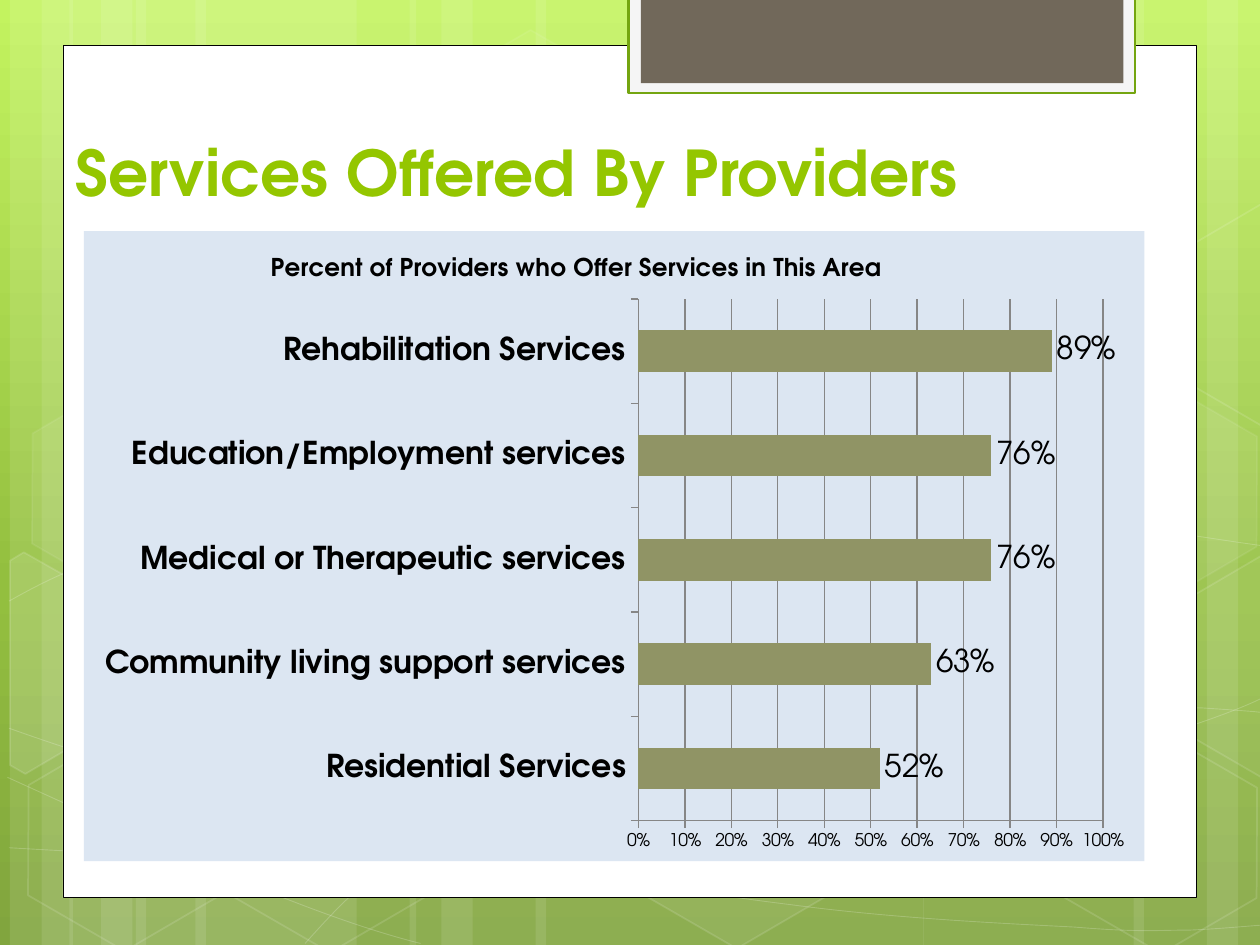
from copy import deepcopy
from math import cos, radians, sin

from lxml import etree
from pptx import Presentation
from pptx import util as u
from pptx.chart.data import CategoryChartData
from pptx.dml.color import RGBColor
from pptx.enum import chart as ch, shapes, text
from pptx.oxml import parse_xml
from pptx.oxml.ns import nsdecls, qn

WHITE = RGBColor(0xFF, 0xFF, 0xFF)
BLACK = RGBColor(0, 0, 0)
LIME = RGBColor(0x94, 0xC6, 0x00)
TAB_EDGE = RGBColor(0x74, 0xA5, 0x10)
TAB_FRAME = RGBColor(0xF5, 0xF5, 0xF5)
TAUPE = RGBColor(0x71, 0x68, 0x5A)
PALE_BLUE = RGBColor(0xDC, 0xE6, 0xF2)
OLIVE = RGBColor(0x90, 0x94, 0x65)
GRAY = RGBColor(0x86, 0x86, 0x86)
BACKDROP = [(0, RGBColor(0xC3, 0xF3, 0x5F)), (0.62, RGBColor(0x93, 0xBF, 0x3F)),
            (1, RGBColor(0x81, 0xA5, 0x3E))]
FONT = "TeX Gyre Adventor"
WIDTH, HEIGHT = 25.4, 19.05
TILT = 30

# Each wave is a start point followed by groups of three cubic control points
WAVES = [
    [(0.18, 17.09), (1.55, 17.17), (2.92, 17.25), (4.83, 17.22), (6.73, 17.2), (9.09, 17.15),
     (11.63, 16.89), (14.17, 16.64), (17.78, 16.15), (20.12, 15.67), (22.43, 15.19),
     (24.82, 14.43), (25.58, 14)],
    [(0.18, 12.12), (0.91, 11.71), (1.65, 11.33), (3.07, 10.95), (4.52, 10.57), (6.58, 10.01),
     (8.81, 9.83), (11.07, 9.65), (13.82, 9.63), (16.61, 9.83), (19.41, 10.03),
     (24.05, 10.82), (25.58, 11.02)],
    [(0.15, 15.67), (3.23, 17.07), (6.27, 18.47), (8.48, 19.02)],
    [(0.18, 14.68), (0.97, 14.96), (1.78, 15.24), (3.25, 15.65), (4.72, 16.03), (6.93, 16.66),
     (9.07, 17.09), (11.18, 17.53), (13.84, 17.98), (15.95, 18.24), (18.06, 18.52),
     (20.32, 18.62), (21.67, 18.69), (22.99, 18.8), (23.34, 18.75), (24, 18.75),
     (24.66, 18.72), (25.12, 18.67), (25.58, 18.64)],
    [(6.15, 19.02), (6.6, 18.52), (7.06, 18.01), (7.67, 17.55), (8.28, 17.09), (9.14, 16.59),
     (9.86, 16.23), (10.57, 15.88), (11, 15.72), (11.94, 15.47), (12.85, 15.21),
     (14.55, 14.86), (15.44, 14.68), (16.36, 14.5), (16.48, 14.5), (17.27, 14.45),
     (18.06, 14.38), (19.3, 14.3), (20.17, 14.27), (21.06, 14.25), (22.5, 14.27),
     (22.5, 14.27), (23.07, 14.27), (23.64, 14.27), (24.21, 14.27), (24.66, 14.3),
     (25.1, 14.33), (25.32, 14.35), (25.55, 14.38), (25.48, 14.35), (25.55, 14.38)],
]
# Left, top, fill opacity, line opacity
HEXAGONS = [(8.48, 0.91, 4, 8), (12.62, 14.96, 6, 12), (0.28, 15.01, None, 12),
            (0.36, 7.92, 7, 8), (4.42, 15.04, None, 12), (19.13, 11.51, 10, 12),
            (21.18, 15.06, None, 12), (21.18, 7.98, 7, 8)]
# Hexagons cut by the slide edge
LEFT_CUT = [(0.2, 11.3), (0.48, 11.13), (2.44, 12.24), (2.41, 14.48), (0.51, 15.6), (0.2, 15.42)]
RIGHT_CUT = [(23.52, 12.32), (25.43, 11.2), (25.63, 11.33), (25.63, 15.57), (25.45, 15.67),
             (23.52, 14.55)]

SERVICES = {
    "Residential Services": 0.52,
    "Community living support services": 0.63,
    "Medical or Therapeutic services": 0.76,
    "Education/Employment services": 0.76,
    "Rehabilitation Services": 0.89,
}


def turned(points, center, degrees):
    """Turn the points clockwise about the center."""
    c, s = cos(radians(degrees)), sin(radians(degrees))
    cx, cy = center
    return [(cx + (x - cx) * c - (y - cy) * s, cy + (x - cx) * s + (y - cy) * c)
            for x, y in points]


def manual_layout(element, inner=False, **fractions):
    """Place a chart part by fractions of the chart size."""
    target = '<c:layoutTarget val="inner"/>' if inner else ""
    modes = "".join(f'<c:{k}Mode val="edge"/>' for k in fractions if k in "xy")
    places = "".join(f'<c:{k} val="{v}"/>' for k, v in fractions.items())
    layout = parse_xml(f'<c:layout {nsdecls("c")}><c:manualLayout>{target}{modes}{places}'
                       '</c:manualLayout></c:layout>')
    for old in element.findall(qn("c:layout")):
        element.remove(old)
    tx = element.find(qn("c:tx"))
    element.insert(0 if tx is None else element.index(tx) + 1, layout)


class Deck:
    def __init__(self):
        self.prs = Presentation()
        self.prs.slide_width, self.prs.slide_height = u.Cm(WIDTH), u.Cm(HEIGHT)
        self.slide = self.prs.slides.add_slide(self.prs.slide_layouts[5])

    def backdrop(self, stops):
        fill = self.slide.background.fill
        fill.gradient()
        fill.gradient_angle = 270
        stop_list = self.slide.element.xpath(".//p:bg//a:gsLst")[0]
        stop_list.append(deepcopy(stop_list[-1]))
        for stop, (position, color) in zip(fill.gradient_stops, stops):
            stop.position, stop.color.rgb = position, color

    def paint(self, fill, color, opacity=100):
        fill.solid()
        fill.fore_color.rgb = color
        if opacity < 100:
            for rgb in fill._xPr.iterfind(qn("a:solidFill") + "/" + qn("a:srgbClr")):
                etree.SubElement(rgb, qn("a:alpha")).set("val", str(opacity * 1000))

    def style(self, shape, fill=None, opacity=100, line=None, weight=1, line_opacity=100):
        shape.shadow.inherit = False
        if fill is None or opacity is None:
            shape.fill.background()
        else:
            self.paint(shape.fill, fill, opacity)
        if line is None:
            shape.line.fill.background()
        else:
            shape.line.width = u.Pt(weight)
            self.paint(shape.line.fill, line, line_opacity)
        return shape

    def preset(self, kind, left, top, width, height, **look):
        shape = self.slide.shapes.add_shape(kind, u.Cm(left), u.Cm(top), u.Cm(width), u.Cm(height))
        return self.style(shape, **look)

    def rect(self, *box, **look):
        return self.preset(shapes.MSO_SHAPE.RECTANGLE, *box, **look)

    def hexagon(self, left, top, **look):
        hexagon = self.preset(shapes.MSO_SHAPE.HEXAGON, left, top, 4.45, 3.86, **look)
        hexagon.rotation = TILT
        hexagon.adjustments[0], hexagon.adjustments[1] = 0.285, 1.155

    def outline(self, points, close=False, **look):
        start, *rest = [(u.Cm(x), u.Cm(y)) for x, y in points]
        builder = self.slide.shapes.build_freeform(*start)
        builder.add_line_segments(rest, close=close)
        return self.style(builder.convert_to_shape(), **look)

    def wave(self, controls, **look):
        # Join every three line ends into one cubic curve
        wave = self.outline(controls, **look)
        ends = wave.element.xpath(".//a:lnTo")
        for i in range(0, len(ends), 3):
            curve = etree.Element(qn("a:cubicBezTo"))
            ends[i].addprevious(curve)
            for end in ends[i:i + 3]:
                curve.append(end[0])
                end.getparent().remove(end)

    def font(self, font, size, color=BLACK, bold=False):
        font.name, font.size, font.bold = FONT, u.Pt(size), bold
        font.color.rgb = color

    def title(self, words, left, top, width, height):
        title = self.slide.shapes.title
        title.left, title.top, title.width, title.height = map(u.Cm, (left, top, width, height))
        title.text_frame.vertical_anchor = text.MSO_ANCHOR.BOTTOM
        title.text_frame.word_wrap = True
        paragraph = title.text_frame.paragraphs[0]
        paragraph.alignment = text.PP_ALIGN.LEFT
        run = paragraph.add_run()
        run.text = words
        self.font(run.font, 36, LIME, True)
        # Bring the title in front of the decoration
        title.element.getparent().append(title.element)

    def bar_chart(self, heading, shares, *box):
        data = CategoryChartData(number_format="0%")
        data.categories = list(shares)
        data.add_series("Series 1", list(shares.values()))
        chart = self.slide.shapes.add_chart(ch.XL_CHART_TYPE.BAR_CLUSTERED,
                                            *map(u.Cm, box), data).chart
        self.font(chart.font, 10)
        chart.has_legend = False
        space = chart.element
        space.find(qn("c:chart")).addnext(parse_xml(
            f'<c:spPr {nsdecls("c", "a")}><a:solidFill><a:srgbClr val="{PALE_BLUE}"/>'
            '</a:solidFill><a:ln><a:noFill/></a:ln></c:spPr>'))

        # Heading and plot area
        run = chart.chart_title.text_frame.paragraphs[0].add_run()
        run.text = heading
        self.font(run.font, 14, bold=True)
        manual_layout(space.xpath("c:chart/c:title")[0], x=0.172, y=0.031)
        manual_layout(space.xpath("c:chart/c:plotArea")[0], inner=True,
                      x=0.523, y=0.108, w=0.438, h=0.828)

        # Axes
        for axis, size, bold in ((chart.category_axis, 18, True), (chart.value_axis, 10, False)):
            self.font(axis.tick_labels.font, size, bold=bold)
            axis.major_tick_mark = ch.XL_TICK_MARK.OUTSIDE
            axis.format.line.color.rgb = GRAY
        values = chart.value_axis
        values.minimum_scale, values.maximum_scale, values.major_unit = 0, 1, 0.1
        values.tick_labels.number_format = "0%"
        values.tick_labels.number_format_is_linked = False
        values.major_gridlines.format.line.color.rgb = GRAY

        # Bars and their labels
        plot = chart.plots[0]
        plot.gap_width, plot.vary_by_categories = 150, False
        self.paint(plot.series[0].format.fill, OLIVE)
        labels = plot.series[0].data_labels
        labels.show_value = True
        labels.number_format, labels.number_format_is_linked = "0%", False
        labels.position = ch.XL_LABEL_POSITION.OUTSIDE_END
        self.font(labels.font, 18)


def main():
    deck = Deck()
    deck.backdrop(BACKDROP)

    # Light stripes: bundles of three, one of them mirrored from the right edge
    for edge, wide, mirrored in ((0.2, 4.45, False), (1.4, 4.45, False),
                                 (25.6, 4.45, True), (8.26, 7.82, False)):
        for offset, width in ((2.54, wide), (0, 1.27), (0.64, 2.11)):
            left = edge - offset - width if mirrored else edge + offset
            stripe = deck.rect(left, 0, width, HEIGHT, fill=WHITE, opacity=10)
            stripe.rotation = 180 if mirrored else 0

    # Waves and hexagons
    for controls in WAVES:
        deck.wave(controls, line=WHITE, weight=0.5, line_opacity=20)
    for left, top, opacity, line_opacity in HEXAGONS:
        deck.hexagon(left, top, fill=WHITE, opacity=opacity, line=WHITE, line_opacity=line_opacity)
    upper_cut = [(x, y - 7.09) for x, y in RIGHT_CUT]
    for corners, center, opacity in ((LEFT_CUT, (0.91, 13.59), 10), (RIGHT_CUT, (25.02, 13.21), 4),
                                     (upper_cut, (25.02, 6.12), None)):
        cut = deck.outline(turned(corners, center, -TILT), close=True, fill=WHITE,
                           opacity=opacity, line=WHITE, line_opacity=12)
        cut.rotation = TILT

    # Page panel and top tab
    deck.rect(1.27, 0.91, 22.86, 17.19, fill=WHITE, line=BLACK, weight=0.5)
    deck.rect(12.67, -0.05, 10.21, 1.93, fill=TAB_FRAME, line=TAB_EDGE, weight=1.25)
    deck.rect(12.92, -0.05, 9.73, 1.73, fill=TAUPE)

    # Content
    deck.title("Services Offered By Providers", 1.27, 2.11, 19.51, 2.24)
    deck.bar_chart("Percent of Providers who Offer Services in This Area", SERVICES,
                   1.69, 4.66, 21.38, 12.7)
    deck.prs.save("out.pptx")


if __name__ == "__main__":
    main()
